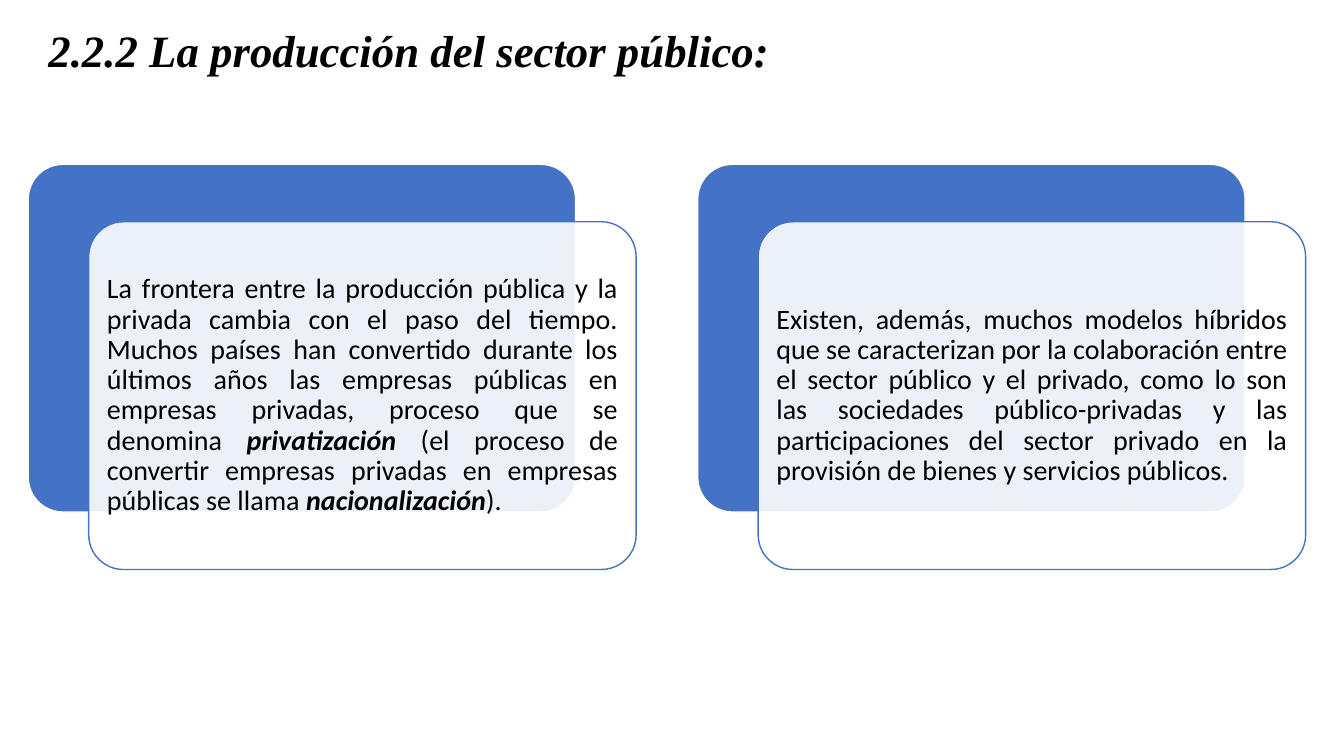
from copy import deepcopy

from lxml import etree
from pptx import Presentation
from pptx import util as u
from pptx.dml.color import RGBColor
from pptx.enum import shapes, text
from pptx.oxml.ns import qn

BLUE = RGBColor(0x44, 0x72, 0xC4)
WHITE = RGBColor(0xFF, 0xFF, 0xFF)
BLACK = RGBColor(0x00, 0x00, 0x00)

FRONTIER = [
    ("La frontera entre la producción pública y la privada cambia con el paso del tiempo. "
     "Muchos países han convertido durante los últimos años las empresas públicas en "
     "empresas privadas, proceso que se denomina ", False),
    ("privatización", True),
    (" (el proceso de convertir empresas privadas en empresas públicas se llama ", False),
    ("nacionalización", True),
    (").", False),
]
HYBRIDS = [
    ("Existen, además, muchos modelos híbridos que se caracterizan por la colaboración "
     "entre el sector público y el privado, como lo son las sociedades público-privadas "
     "y las participaciones del sector privado en la provisión de bienes y servicios "
     "públicos.", False),
]


def add_run(paragraph, wording, font_name, size, emphasis):
    run = paragraph.add_run()
    run.text = wording
    run.font.name = font_name
    run.font.size = u.Pt(size)
    run.font.bold = run.font.italic = emphasis
    run.font.color.rgb = BLACK
    return run


def place_heading(slide, left, top, width, height):
    heading = slide.shapes.title
    heading.left, heading.top = u.Inches(left), u.Inches(top)
    heading.width, heading.height = u.Inches(width), u.Inches(height)
    frame = heading.text_frame
    frame.auto_size = text.MSO_AUTO_SIZE.NONE
    frame.vertical_anchor = text.MSO_ANCHOR.MIDDLE
    line = frame.paragraphs[0]
    line.alignment = text.PP_ALIGN.LEFT
    line.line_spacing = 0.9
    wording = add_run(line, "2.2.2 La producción del sector público:",
                      "Times New Roman", 32, True)
    line.add_line_break()
    style = wording.font._element
    line._p.find(qn("a:br")).append(deepcopy(style))
    ending = etree.SubElement(line._p, qn("a:endParaRPr"), dict(style.attrib))
    ending.extend(deepcopy(child) for child in style)


def add_panel(slide, left, top, width, height, fill, outline):
    panel = slide.shapes.add_shape(
        shapes.MSO_SHAPE.ROUNDED_RECTANGLE,
        u.Inches(left), u.Inches(top), u.Inches(width), u.Inches(height))
    panel.adjustments[0] = 0.1
    panel.shadow.inherit = False
    panel.fill.solid()
    panel.fill.fore_color.rgb = fill
    panel.line.color.rgb = outline
    panel.line.width = u.Pt(1)
    return panel


def place_card(slide, left, top, width, height, passages):
    shift_x, shift_y = 0.6, 0.57
    panel_width, panel_height = width - shift_x, height - shift_y
    add_panel(slide, left, top, panel_width, panel_height, BLUE, WHITE)
    front = add_panel(slide, left + shift_x, top + shift_y,
                      panel_width, panel_height, WHITE, BLUE)
    tint = front._element.spPr.find(qn("a:solidFill"))[0]
    etree.SubElement(tint, qn("a:alpha"), val="90000")

    frame = front.text_frame
    frame.word_wrap = True
    frame.vertical_anchor = text.MSO_ANCHOR.MIDDLE
    frame.margin_left = frame.margin_right = u.Inches(0.08)
    frame.margin_top = frame.margin_bottom = u.Inches(0.08)
    explanation = frame.paragraphs[0]
    explanation.alignment = text.PP_ALIGN.JUSTIFY
    explanation.line_spacing = 0.9
    for wording, emphasis in passages:
        add_run(explanation, wording, "Calibri", 20, emphasis)


def main():
    deck = Presentation()
    deck.slide_width, deck.slide_height = u.Inches(13.33), u.Inches(7.5)
    slide = deck.slides.add_slide(deck.slide_layouts[5])
    place_heading(slide, 0.38, 0, 11.04, 1.58)
    for column, passages in enumerate((FRONTIER, HYBRIDS)):
        place_card(slide, 0.28 + column * 6.64, 1.63, 6.03, 4.02, passages)
    deck.save("out.pptx")


if __name__ == "__main__":
    main()
